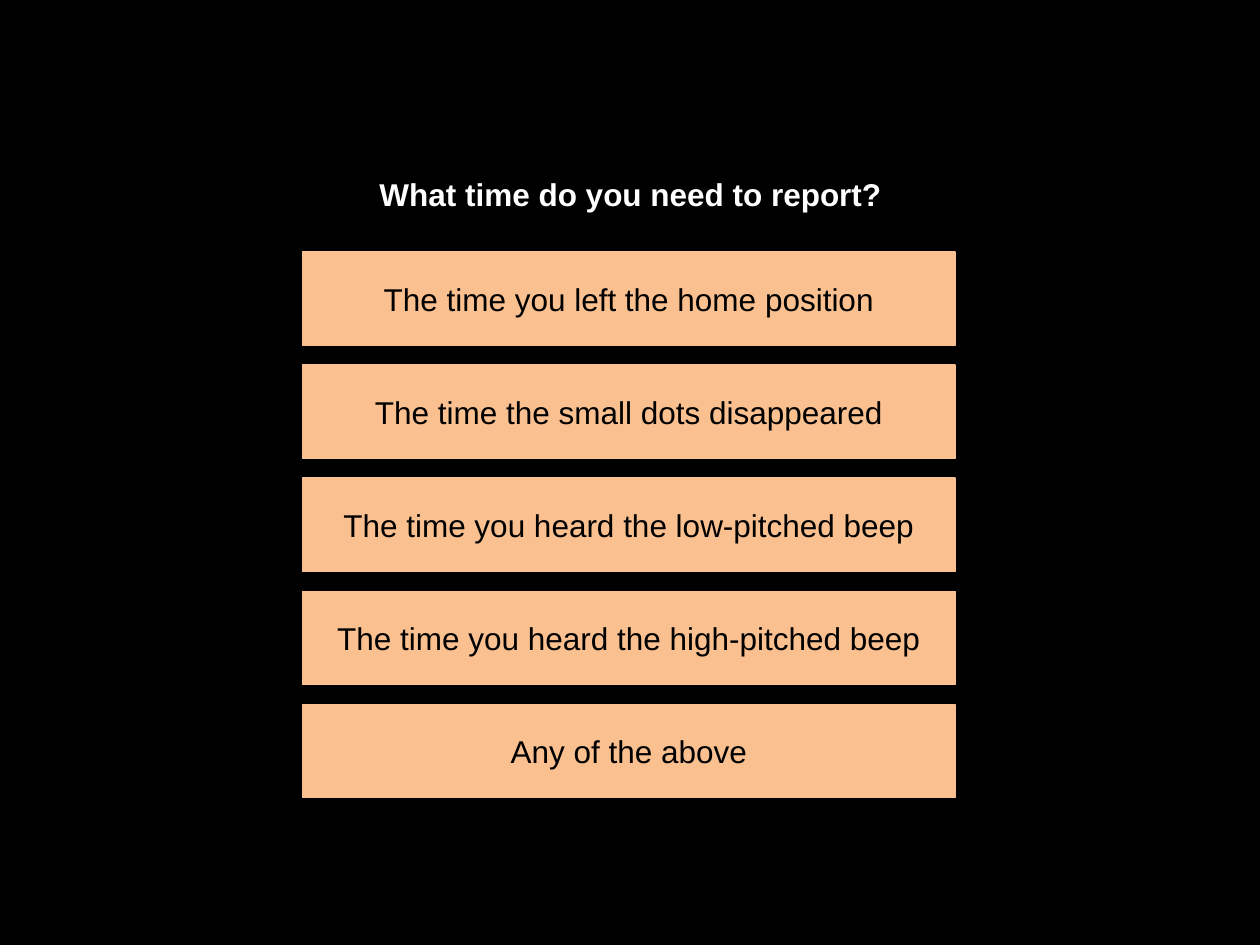
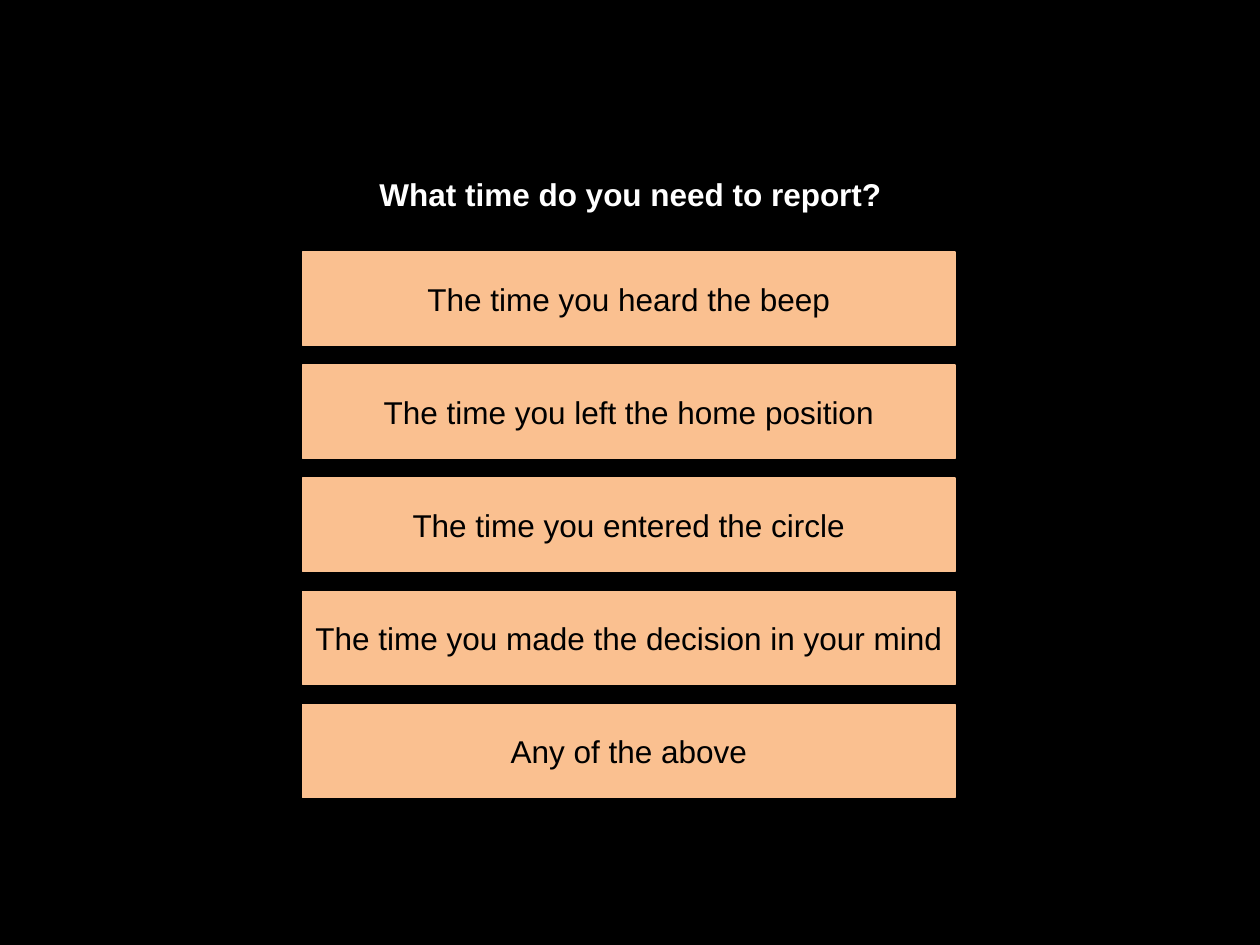
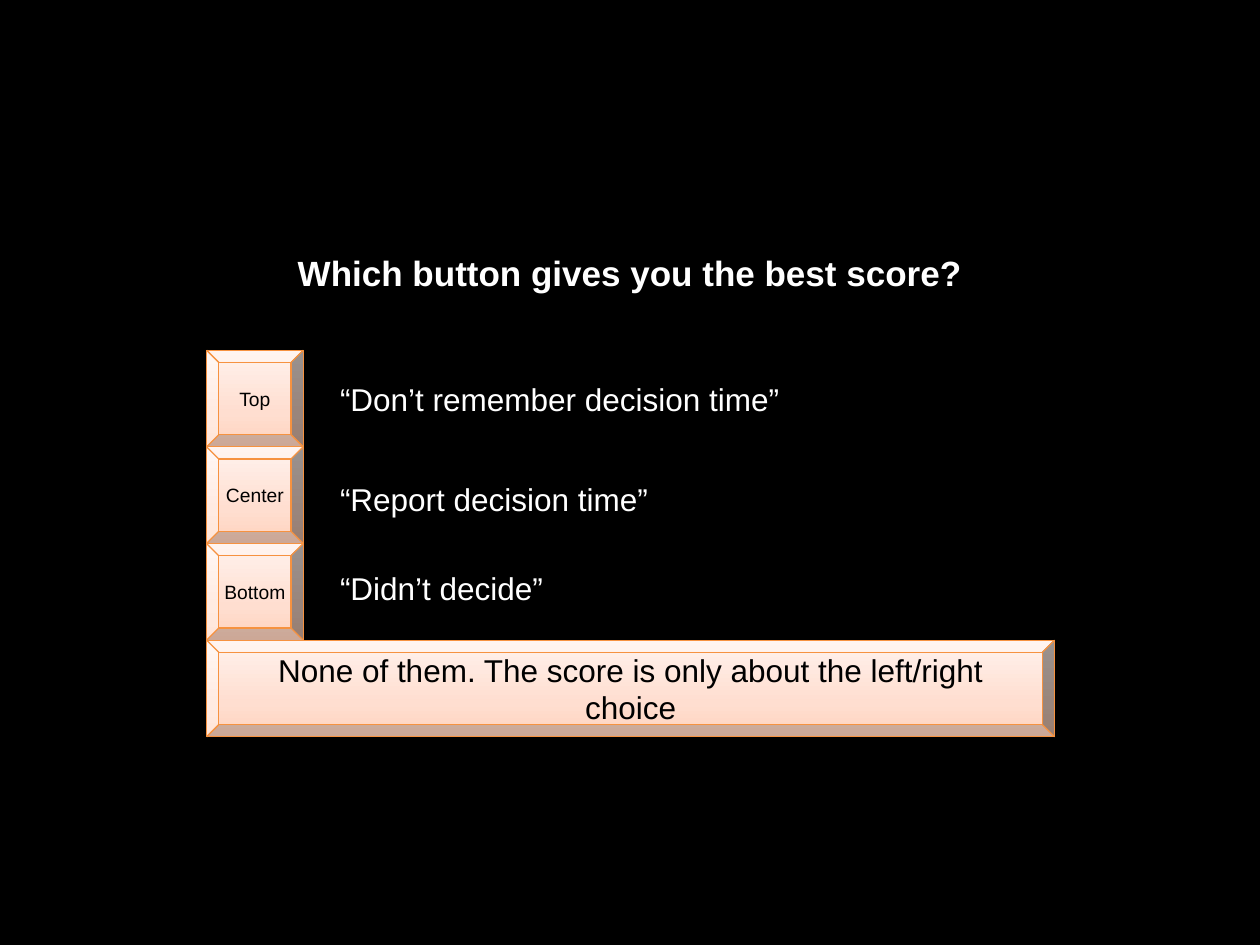
import copy
from dataclasses import dataclass

import pptx
import pptx.dml.color
import pptx.enum.shapes
import pptx.enum.text
import pptx.oxml.ns
import pptx.util

Inches = pptx.util.Inches
Shapes = pptx.enum.shapes.MSO_SHAPE
Align = pptx.enum.text.PP_ALIGN

# Content
QUESTION = "What time do you need to report?"
ANSWER_SLIDES = [
    [
        "The time you left the home position",
        "The time the small dots disappeared",
        "The time you heard the low-pitched beep",
        "The time you heard the high-pitched beep",
        "Any of the above",
    ],
    [
        "The time you heard the beep",
        "The time you left the home position",
        "The time you entered the circle",
        "The time you made the decision in your mind",
        "Any of the above",
    ],
]
SCORE_QUESTION = "Which button gives you the best score?"
# Button name, its meaning, top of the meaning in inches
SCORE_BUTTONS = [
    ("Top", "“Don’t remember decision time”", 2.97),
    ("Center", "“Report decision time”", 3.76),
    ("Bottom", "“Didn’t decide”", 4.47),
]
SCORE_NONE = "None of them. The score is only about the left/right choice"


@dataclass(frozen=True)
class Theme:
    font: str = "Arial"
    background: str = "000000"
    light_text: str = "FFFFFF"
    dark_text: str = "000000"
    answer: str = "FAC090"
    button_line: str = "F69240"
    button_stops: tuple = ((0, "FFD2BD"), (0.35, "FFDED0"), (1, "FFF2ED"))
    line_width: float = 0.75
    heading_size: int = 20
    body_size: int = 18
    button_size: int = 11


THEME = Theme()

# Layout in inches
SLIDE_WIDTH, SLIDE_HEIGHT = 10, 7.5
LABEL_HEIGHT = 0.4
ANSWER_LEFT, ANSWER_WIDTH, ANSWER_HEIGHT = 2.4, 5.18, 0.74
ANSWER_FIRST_TOP, ANSWER_LAST_TOP = 2, 5.59
BUTTON_LEFT, BUTTON_TOP, BUTTON_SIDE = 1.64, 2.78, 0.767
WIDE_BUTTON_WIDTH = 6.73


def color(value):
    return pptx.dml.color.RGBColor.from_string(value)


def add_slide(presentation):
    slide = presentation.slides.add_slide(presentation.slide_layouts[6])
    slide.background.fill.solid()
    slide.background.fill.fore_color.rgb = color(THEME.background)
    return slide


def write(shape, text, size, text_color, align=Align.CENTER, bold=False):
    shape.text_frame.word_wrap = True
    paragraph = shape.text_frame.paragraphs[0]
    paragraph.alignment = align
    run = paragraph.add_run()
    run.text = text
    run.font.name = THEME.font
    run.font.size = pptx.util.Pt(size)
    run.font.bold = bold
    run.font.color.rgb = color(text_color)


def add_label(slide, box, text, size=THEME.body_size, **style):
    label = slide.shapes.add_textbox(*map(Inches, box))
    write(label, text, size, THEME.light_text, **style)


def add_box(slide, kind, box, text, line_color, size=THEME.body_size):
    shape = slide.shapes.add_shape(kind, *map(Inches, box))
    shape.shadow.inherit = False
    shape.line.color.rgb = color(line_color)
    shape.line.width = pptx.util.Pt(THEME.line_width)
    shape.text_frame.vertical_anchor = pptx.enum.text.MSO_ANCHOR.MIDDLE
    write(shape, text, size, THEME.dark_text)
    return shape


def add_answer(slide, top, text):
    box = (ANSWER_LEFT, top, ANSWER_WIDTH, ANSWER_HEIGHT)
    shape = add_box(slide, Shapes.RECTANGLE, box, text, THEME.answer)
    shape.fill.solid()
    shape.fill.fore_color.rgb = color(THEME.answer)


def add_button(slide, row, width, text, size):
    box = (BUTTON_LEFT, BUTTON_TOP + row * BUTTON_SIDE, width, BUTTON_SIDE)
    shape = add_box(slide, Shapes.BEVEL, box, text, THEME.button_line, size)
    shape.fill.gradient()
    shape.fill.gradient_angle = 90
    # The default gradient has two stops; a third is cloned from the last
    stop_list = shape.element.spPr.find(".//" + pptx.oxml.ns.qn("a:gsLst"))
    stop_list.append(copy.deepcopy(stop_list[-1]))
    for stop, (position, value) in zip(shape.fill.gradient_stops, THEME.button_stops):
        stop.position = position
        stop.color.rgb = color(value)
    return shape


def add_answer_slide(presentation, answers):
    slide = add_slide(presentation)
    add_label(slide, (1.03, 1.34, 7.95, LABEL_HEIGHT), QUESTION, bold=True)
    pitch = (ANSWER_LAST_TOP - ANSWER_FIRST_TOP) / (len(answers) - 1)
    for row, answer in enumerate(answers):
        add_answer(slide, ANSWER_FIRST_TOP + row * pitch, answer)


def add_score_slide(presentation):
    slide = add_slide(presentation)
    add_label(slide, (0, 1.95, SLIDE_WIDTH, 1.63), SCORE_QUESTION,
              THEME.heading_size, bold=True)
    for row, (name, meaning, top) in enumerate(SCORE_BUTTONS):
        button = add_button(slide, row, BUTTON_SIDE, name, THEME.button_size)
        frame = button.text_frame
        frame.margin_left = frame.margin_right = 0
        frame.margin_top = frame.margin_bottom = 0
        add_label(slide, (2.6, top, 4.38, LABEL_HEIGHT), meaning, align=Align.LEFT)
    add_button(slide, len(SCORE_BUTTONS), WIDE_BUTTON_WIDTH, SCORE_NONE, THEME.body_size)


def main():
    presentation = pptx.Presentation()
    presentation.slide_width = Inches(SLIDE_WIDTH)
    presentation.slide_height = Inches(SLIDE_HEIGHT)
    for answers in ANSWER_SLIDES:
        add_answer_slide(presentation, answers)
    add_score_slide(presentation)
    presentation.save("out.pptx")


if __name__ == "__main__":
    main()
